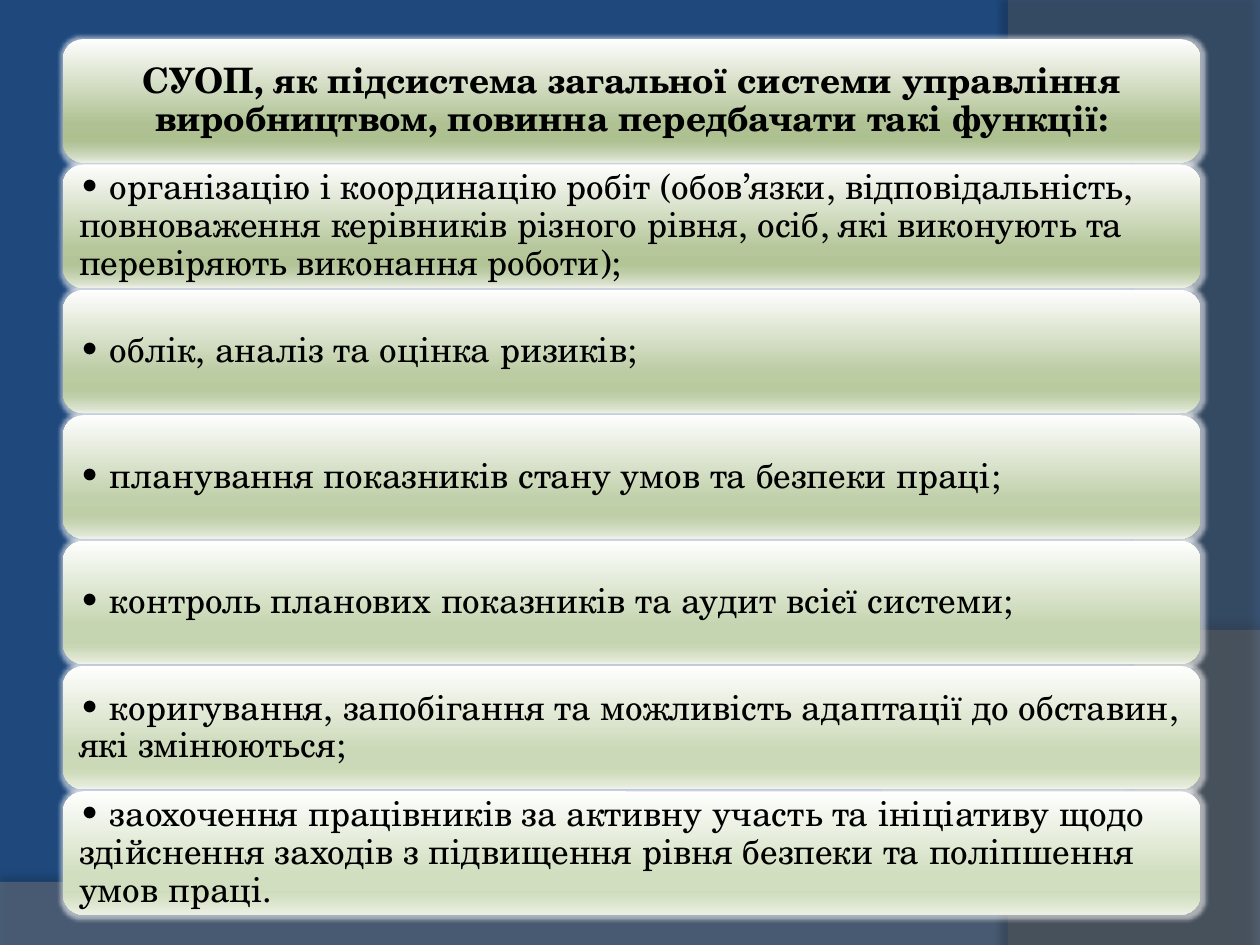
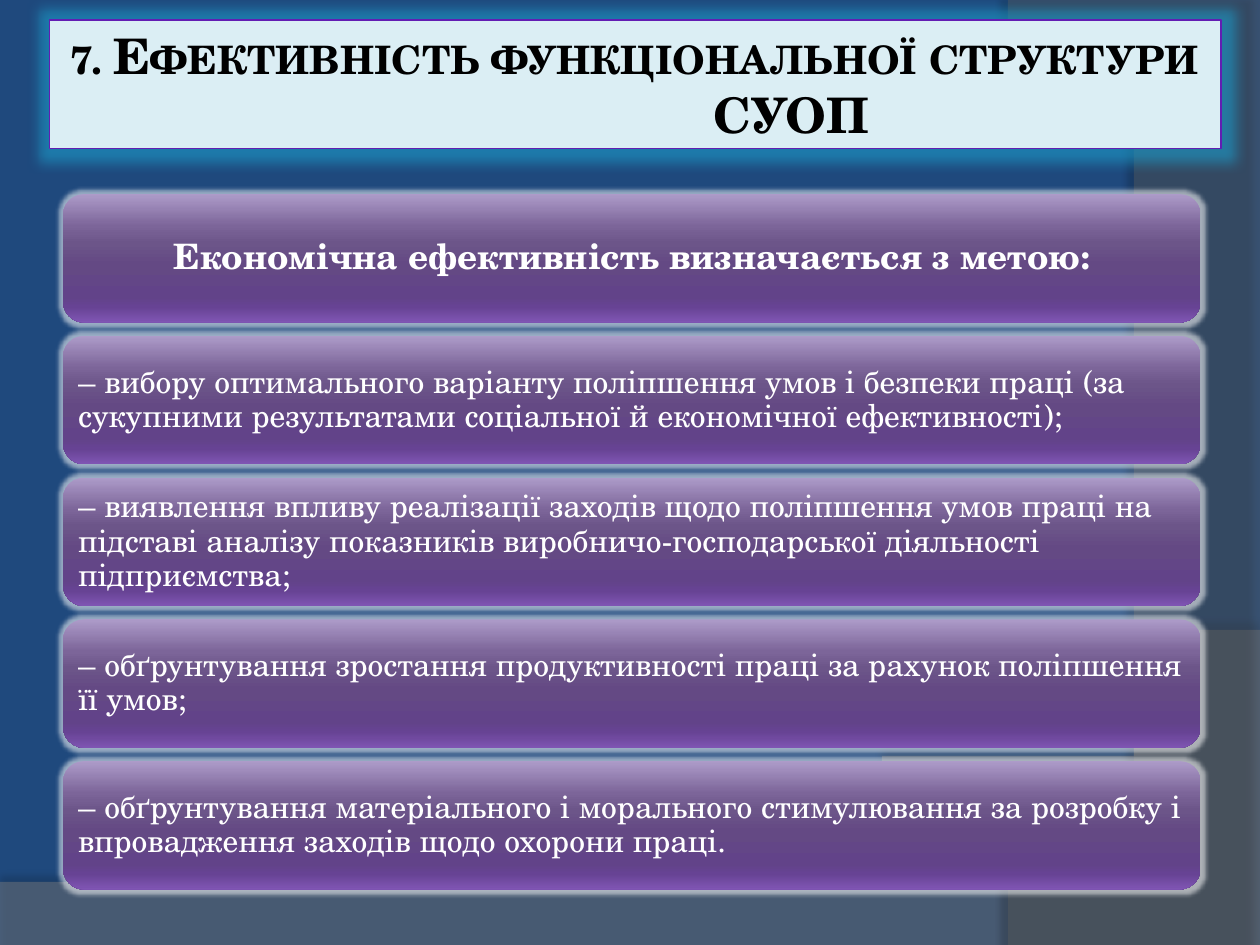
from dataclasses import dataclass

from lxml.etree import SubElement
from pptx import Presentation
from pptx.dml.color import RGBColor
from pptx.enum.shapes import MSO_SHAPE
from pptx.enum.text import MSO_ANCHOR, MSO_AUTO_SIZE, PP_ALIGN
from pptx.oxml.ns import qn
from pptx.util import Inches, Pt

# Content
FUNCTIONS = [
    "СУОП, як підсистема загальної системи управління виробництвом, "
    "повинна передбачати такі функції:",
    "• організацію і координацію робіт (обов’язки, відповідальність, "
    "повноваження керівників різного рівня, осіб, які виконують та "
    "перевіряють виконання роботи);",
    "• облік, аналіз та оцінка ризиків;",
    "• планування показників стану умов та безпеки праці;",
    "• контроль планових показників та аудит всієї системи;",
    "• коригування, запобігання та можливість адаптації до обставин, "
    "які змінюються;",
    "• заохочення працівників за активну участь та ініціативу щодо "
    "здійснення заходів з підвищення рівня безпеки та поліпшення умов праці.",
]
EFFICIENCY_TITLE = "7. Ефективність функціональної структури СУОП"
EFFICIENCY_GOALS = [
    "Економічна ефективність визначається з метою:",
    "– вибору оптимального варіанту поліпшення умов і безпеки праці "
    "(за сукупними результатами соціальної й економічної ефективності);",
    "– виявлення впливу реалізації заходів щодо поліпшення умов праці на "
    "підставі аналізу показників виробничо-господарської діяльності "
    "підприємства;",
    "– обґрунтування зростання продуктивності праці за рахунок поліпшення "
    "її умов;",
    "– обґрунтування матеріального і морального стимулювання за розробку і "
    "впровадження заходів щодо охорони праці.",
]


@dataclass(frozen=True)
class Theme:
    width: float = 10
    height: float = 7.5
    font: str = "TeX Gyre Schola"
    background: str = "1F497D"
    floor: str = "7F7F7F"
    side: str = "5E5E5E"
    dark: str = "000000"
    light: str = "FFFFFF"
    title_fill: str = "DBEEF4"
    title_line: str = "621EB3"
    title_glow: str = "1C9AC8"
    title_size: int = 28
    head_size: int = 20
    small_size: int = 18


THEME = Theme()

# Gradient stops: position in percent, colour in the first row, in the last row
GREEN = [(0, "FEFEFE", "FEFFFE"), (68, "B0C294", "D1DEBF"),
         (81, "ADC08F", "D0DDBD"), (86, "B5C69C", "D4E0C3"),
         (100, "E0E6D7", "ECF1E5")]
PURPLE = [(stop, colour, colour) for stop, colour in [
    (0, "AD9BC9"), (25, "7C6599"), (38, "6C5589"), (55, "644984"),
    (80, "624389"), (88, "674394"), (100, "7F55B3")]]


# Formatting helpers
def blend(first, last, share):
    pairs = zip(RGBColor.from_string(first), RGBColor.from_string(last))
    return str(RGBColor(*(round(a + (b - a) * share) for a, b in pairs)))


def add_colour(parent, colour, alpha=100):
    node = SubElement(parent, qn("a:srgbClr"), val=colour)
    if alpha < 100:
        SubElement(node, qn("a:alpha"), val=str(alpha * 1000))


def add_effect(shape, kind, colour, alpha, **lengths):
    shape.shadow.inherit = False
    effects = shape.element.spPr.find(qn("a:effectLst"))
    values = {name: str(int(value)) for name, value in lengths.items()}
    add_colour(SubElement(effects, qn(f"a:{kind}"), values), colour, alpha)


def fill_solid(shape, colour):
    shape.fill.solid()
    shape.fill.fore_color.rgb = RGBColor.from_string(colour)


def fill_gradient(shape, stops):
    shape.fill.gradient()
    shape.fill.gradient_angle = 270
    stop_list = shape.element.spPr.find(qn("a:gradFill")).find(qn("a:gsLst"))
    for node in list(stop_list):
        stop_list.remove(node)
    for position, colour in stops:
        add_colour(SubElement(stop_list, qn("a:gs"), pos=str(position * 1000)),
                   colour)


def write_text(shape, text, size, colour, bold=False, centred=False,
               spacing=1.0, inset=None):
    frame = shape.text_frame
    frame.word_wrap = True
    frame.auto_size = MSO_AUTO_SIZE.NONE
    frame.vertical_anchor = MSO_ANCHOR.MIDDLE
    if inset is not None:
        frame.margin_left = frame.margin_right = Inches(inset)
        frame.margin_top = frame.margin_bottom = Inches(inset)
    para = frame.paragraphs[0]
    para.alignment = PP_ALIGN.CENTER if centred else PP_ALIGN.LEFT
    para.line_spacing = spacing
    span = para.add_run()
    span.text = text
    span.font.name = THEME.font
    span.font.size = Pt(size)
    span.font.bold = bold
    span.font.color.rgb = RGBColor.from_string(colour)
    return para, span


# Shared backdrop, kept on the slide master
def curve(start, pull_start, pull_end, end, steps=40):
    points = []
    for step in range(steps + 1):
        t = step / steps
        weights = ((1 - t) ** 3, 3 * t * (1 - t) ** 2, 3 * t * t * (1 - t), t ** 3)
        points.append(tuple(
            sum(weight * value for weight, value in zip(weights, axis))
            for axis in zip(start, pull_start, pull_end, end)))
    return points


def draw_backdrop(deck, page):
    right, bottom = THEME.width, THEME.height
    floor = [(0, bottom), (right, bottom)] + curve(
        (right, 5.2), (5.59, 7.29), (3.91, 7.19), (0, 7.05))
    side = [(right, 0.02), (right, bottom)] + curve(
        (8.21, bottom), (9.35, 6.19), (10.18, 3), (8, 0))
    # outline, colour, opacity, shadow opacity, shadow distance, direction
    waves = [(floor, THEME.floor, 45, 35, 3.5, 270),
             (side, THEME.side, 40, 45, 4, 180)]
    master = deck.slide_master
    master.background.fill.solid()
    master.background.fill.fore_color.rgb = RGBColor.from_string(THEME.background)
    for order, (points, colour, opacity, shade, distance, angle) in enumerate(waves):
        builder = page.shapes.build_freeform(*points[0], scale=Inches(1))
        builder.add_line_segments(points[1:], close=True)
        wave = builder.convert_to_shape()
        fill_solid(wave, colour)
        wave.line.fill.background()
        tint = wave.element.spPr.find(qn("a:solidFill")).find(qn("a:srgbClr"))
        SubElement(tint, qn("a:alpha"), val=str(opacity * 1000))
        add_effect(wave, "outerShdw", THEME.dark, shade, blurRad=Pt(4),
                   dist=Pt(distance), dir=angle * 60000)
        wave.element.nvSpPr.cNvPr.set("id", str(100 + order))
        master.shapes.element.insert(2 + order, wave.element)


# Stack of rounded panels, the first one being the heading
def draw_panels(page, texts, top, height, pitch, stops, colour, size, inset):
    for row, text in enumerate(texts):
        heading = row == 0
        panel = page.shapes.add_shape(
            MSO_SHAPE.ROUNDED_RECTANGLE, Inches(0.5), Inches(top + row * pitch),
            Inches(9.03), Inches(height))
        share = row / (len(texts) - 1)
        fill_gradient(panel, [(position, blend(first, last, share))
                              for position, first, last in stops])
        panel.line.fill.background()
        add_effect(panel, "glow", THEME.light, 55, rad=Pt(5))
        write_text(panel, text, THEME.head_size if heading else size, colour,
                   bold=heading, centred=heading, spacing=0.9,
                   inset=0.08 if heading else inset)


def draw_title(page, text):
    title = page.shapes.title
    title.left, title.top = Inches(0.39), Inches(0.16)
    title.width, title.height = Inches(9.3), Inches(1.02)
    outline = SubElement(title.element.spPr, qn("a:prstGeom"), prst="roundRect")
    SubElement(outline, qn("a:avLst"))
    fill_solid(title, THEME.title_fill)
    title.line.color.rgb = RGBColor.from_string(THEME.title_line)
    title.line.width = Pt(0.75)
    glow = SubElement(SubElement(title.element.spPr, qn("a:effectLst")),
                      qn("a:glow"), rad=str(Pt(14)))
    add_colour(glow, THEME.title_glow, 60)
    para, span = write_text(title, text, THEME.title_size, THEME.dark,
                            bold=True, centred=True)
    span.font._element.set("cap", "small")
    # Hanging indent moves the second line to the right
    hang = Inches(1.24)
    properties = para._p.get_or_add_pPr()
    properties.set("marL", str(hang))
    properties.set("indent", str(-hang))


def main():
    deck = Presentation()
    deck.slide_width, deck.slide_height = Inches(THEME.width), Inches(THEME.height)
    title_only, blank = deck.slide_layouts[5], deck.slide_layouts[6]

    # Functions of the system
    page = deck.slides.add_slide(blank)
    draw_backdrop(deck, page)
    draw_panels(page, FUNCTIONS, top=0.31, height=0.98, pitch=0.995, stops=GREEN,
                colour=THEME.dark, size=THEME.head_size, inset=0.08)

    # Efficiency of the structure
    page = deck.slides.add_slide(title_only)
    draw_title(page, EFFICIENCY_TITLE)
    draw_panels(page, EFFICIENCY_GOALS, top=1.54, height=1.02, pitch=1.125,
                stops=PURPLE, colour=THEME.light, size=THEME.small_size, inset=0.07)

    deck.save("out.pptx")


if __name__ == "__main__":
    main()
